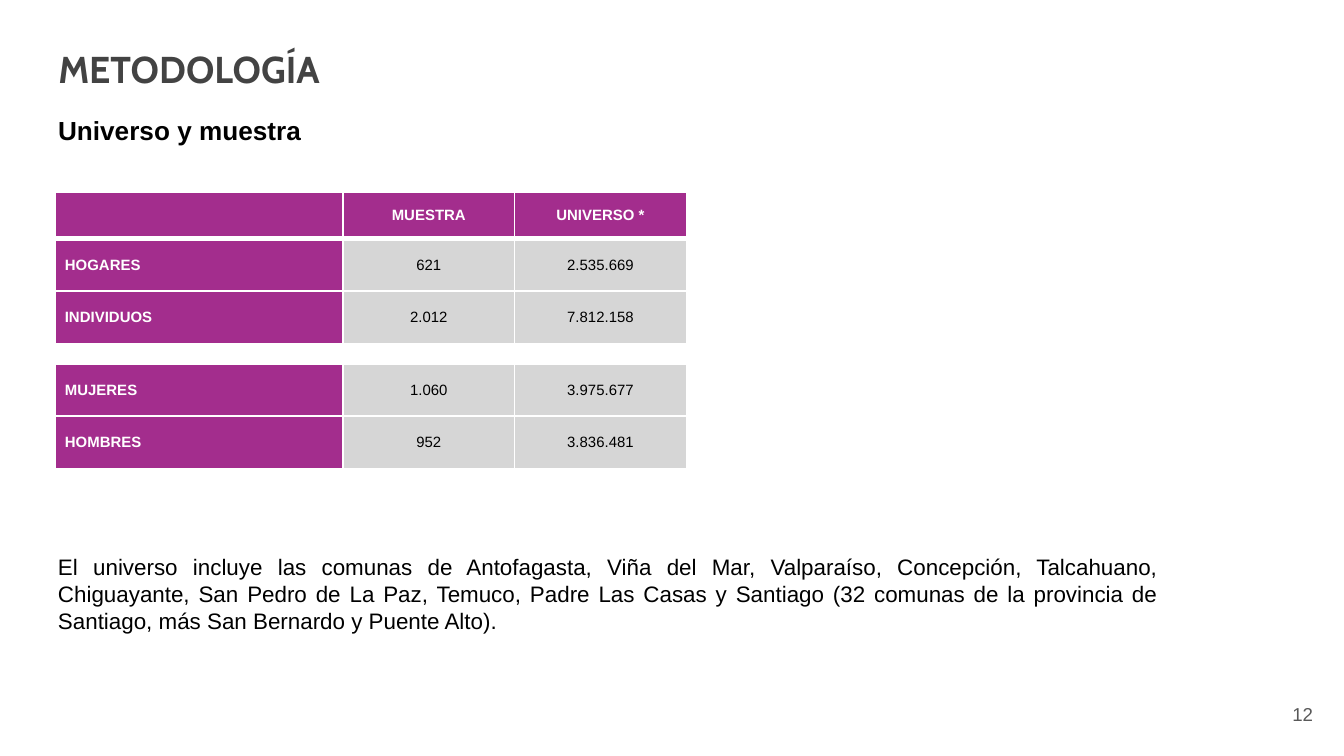
from lxml import etree
from pptx import Presentation
from pptx import util as u
from pptx.dml.color import RGBColor
from pptx.enum import text as t
from pptx.oxml import ns

Pt = u.Pt
PURPLE = RGBColor(0xA3, 0x2D, 0x8D)
GREY = RGBColor(0xD6, 0xD6, 0xD6)
WHITE = RGBColor(0xFF, 0xFF, 0xFF)
BLACK = RGBColor(0, 0, 0)
HEADING = RGBColor(0x43, 0x43, 0x43)
FOOTER = RGBColor(0x59, 0x59, 0x59)


def write(frame, words, size=12, font="Arial", color=BLACK, bold=False,
          align=t.PP_ALIGN.LEFT, anchor=t.MSO_ANCHOR.TOP, wrap=True, inset=(7.2, 3.6)):
    frame.word_wrap = wrap
    frame.auto_size = t.MSO_AUTO_SIZE.NONE
    frame.vertical_anchor = anchor
    frame.margin_left = frame.margin_right = Pt(inset[0])
    frame.margin_top = frame.margin_bottom = Pt(inset[1])
    paragraph = frame.paragraphs[0]
    paragraph.alignment = align
    run = paragraph.add_run()
    run.text = words
    run.font.size = Pt(size)
    run.font.name = font
    run.font.bold = bold
    run.font.color.rgb = color


def draw_borders(cell, bottom):
    properties = cell._tc.get_or_add_tcPr()
    for side, width in (("L", 1), ("R", 1), ("T", 1), ("B", bottom)):
        line = etree.SubElement(properties, ns.qn("a:ln" + side), w=str(Pt(width)))
        fill = etree.SubElement(line, ns.qn("a:solidFill"))
        etree.SubElement(fill, ns.qn("a:srgbClr"), val=str(WHITE))


prs = Presentation()
prs.slide_width, prs.slide_height = Pt(720), Pt(405)
slide = prs.slides.add_slide(prs.slide_layouts[5])

title = slide.shapes.title
title.left, title.top, title.width, title.height = Pt(24), Pt(17.3), Pt(634), Pt(45)
write(title.text_frame, "METODOLOGÍA", size=20, font="Cabin", color=HEADING,
      bold=True, inset=(7.2, 7.2))

subtitle = slide.shapes.add_textbox(Pt(24), Pt(57.6), Pt(145.5), Pt(24.5))
write(subtitle.text_frame, "Universo y muestra", size=14, bold=True, wrap=False)

rows = [
    ("", "MUESTRA", "UNIVERSO *"),
    ("HOGARES", "621", "2.535.669"),
    ("INDIVIDUOS", "2.012", "7.812.158"),
    None,
    ("MUJERES", "1.060", "3.975.677"),
    ("HOMBRES", "952", "3.836.481"),
    None,
]
sample = slide.shapes.add_table(len(rows), 3, Pt(29.75), Pt(103), Pt(338), Pt(159)).table
sample.first_row = sample.horz_banding = False
for column, width in zip(sample.columns, (154, 92, 92)):
    column.width = Pt(width)

for r, values in enumerate(rows):
    sample.rows[r].height = Pt(25 if r == 0 else 28 if values else 11)
    for c, value in enumerate(values or ("", "", "")):
        cell = sample.cell(r, c)
        is_header = r == 0 or c == 0
        draw_borders(cell, bottom=3 if r == 0 else 1)
        if values:
            cell.fill.solid()
            cell.fill.fore_color.rgb = PURPLE if is_header else GREY
        else:
            cell.fill.background()
        cell.vertical_anchor = t.MSO_ANCHOR.MIDDLE
        cell.margin_left = cell.margin_right = Pt(5)
        cell.margin_top = cell.margin_bottom = 0
        if value:
            write(cell.text_frame, value, size=8, bold=is_header,
                  color=WHITE if is_header else BLACK,
                  align=t.PP_ALIGN.CENTER if c else t.PP_ALIGN.LEFT)
        else:
            etree.SubElement(cell.text_frame.paragraphs[0]._p, ns.qn("a:endParaRPr"), sz="800")

coverage = slide.shapes.add_textbox(Pt(24), Pt(293), Pt(604), Pt(51))
write(coverage.text_frame,
      "El universo incluye las comunas de Antofagasta, Viña del Mar, Valparaíso, Concepción, "
      "Talcahuano, Chiguayante, San Pedro de La Paz, Temuco, Padre Las Casas y Santiago "
      "(32 comunas de la provincia de Santiago, más San Bernardo y Puente Alto).",
      align=t.PP_ALIGN.JUSTIFY)

page_number = slide.shapes.add_textbox(Pt(667.5), Pt(367), Pt(43), Pt(31))
write(page_number.text_frame, "12", size=10, color=FOOTER, align=t.PP_ALIGN.RIGHT,
      anchor=t.MSO_ANCHOR.MIDDLE, inset=(7.2, 7.2))

prs.save("out.pptx")
